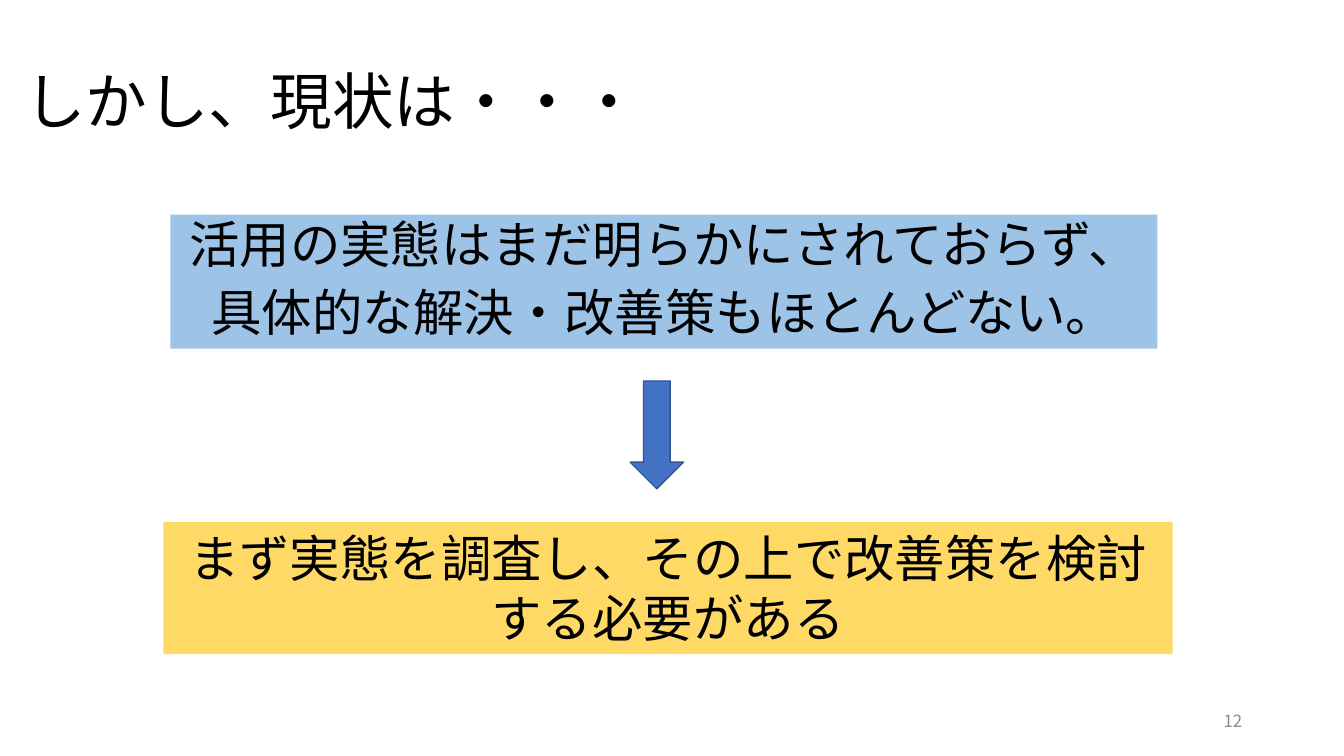
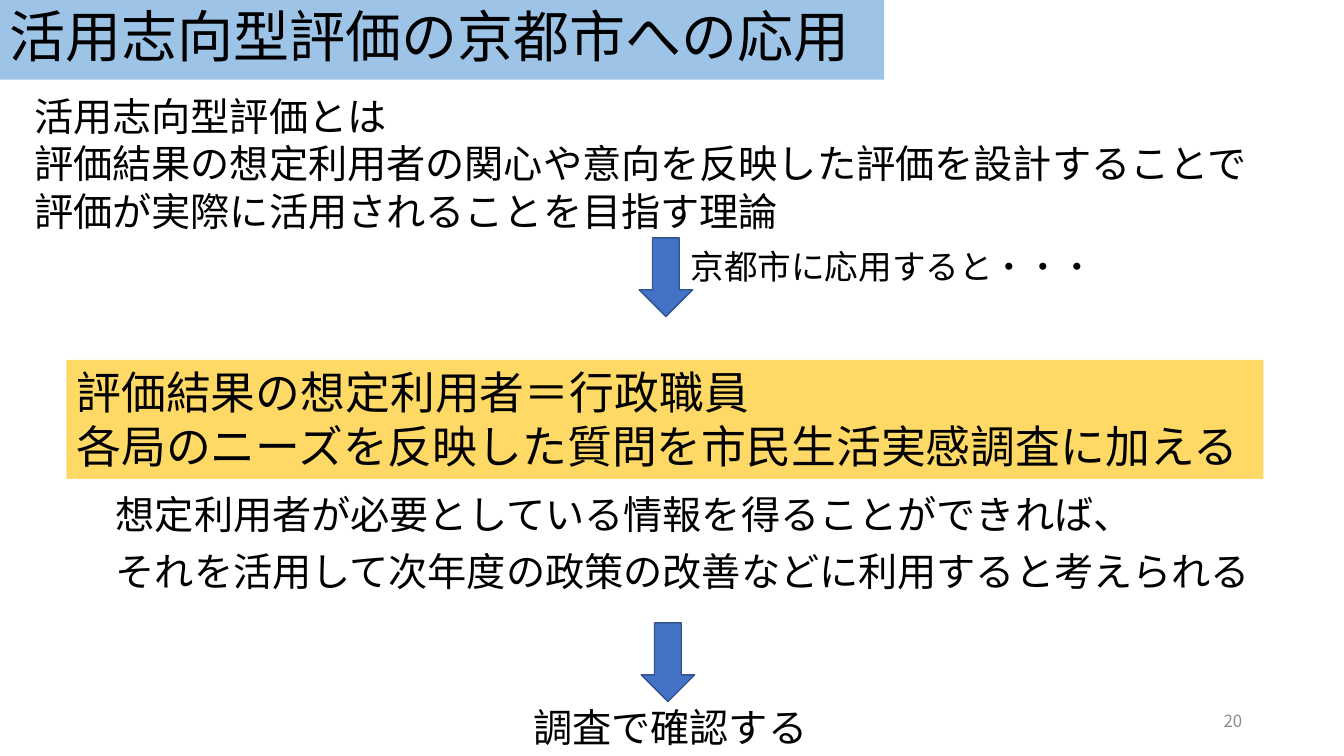
"""Build two slides on putting evaluation results to use."""
import pptx
import pptx.dml.color
import pptx.enum.shapes
import pptx.enum.text
import pptx.util
from lxml import etree

Inches = pptx.util.Inches
Pt = pptx.util.Pt
RGBColor = pptx.dml.color.RGBColor
SHAPE = pptx.enum.shapes.MSO_SHAPE
ALIGN = pptx.enum.text.PP_ALIGN
ANCHOR = pptx.enum.text.MSO_ANCHOR

FONT = "Noto Sans CJK JP"
BLACK = RGBColor(0x00, 0x00, 0x00)
GREY = RGBColor(0x8C, 0x8C, 0x8C)
SKY = RGBColor(0x9D, 0xC3, 0xE6)
GOLD = RGBColor(0xFF, 0xD9, 0x66)
BLUE = RGBColor(0x44, 0x72, 0xC4)
NAVY = RGBColor(0x32, 0x54, 0x91)
DRAWING = "{http://schemas.openxmlformats.org/drawingml/2006/main}"


def add_text(slide, place, lines, size, fill=None, color=BLACK, align=ALIGN.LEFT,
             anchor=ANCHOR.TOP, spacing=1.0, gap=0, indent=None):
    place = [Inches(n) for n in place]
    if fill is None:
        box = slide.shapes.add_textbox(*place)
    else:
        box = slide.shapes.add_shape(SHAPE.RECTANGLE, *place)
        box.shadow.inherit = False
        box.fill.solid()
        box.fill.fore_color.rgb = fill
        box.line.fill.background()
    frame = box.text_frame
    frame.word_wrap = True
    frame.vertical_anchor = anchor
    for i, line in enumerate(lines):
        para = frame.add_paragraph() if i else frame.paragraphs[0]
        para.alignment = align
        para.line_spacing = spacing
        if i:
            para.space_before = Pt(gap)
        if indent:
            props = para._p.get_or_add_pPr()
            props.set("marL", str(Inches(indent[0])))
            props.set("indent", str(Inches(indent[1])))
        run = para.add_run()
        run.text = line
        run.font.size = Pt(size)
        run.font.color.rgb = color
        run.font.name = FONT
        etree.SubElement(run._r.get_or_add_rPr(), DRAWING + "ea", typeface=FONT)


def add_arrow(slide, left, top, height):
    arrow = slide.shapes.add_shape(SHAPE.DOWN_ARROW, Inches(left), Inches(top),
                                   Inches(0.53), Inches(height))
    arrow.shadow.inherit = False
    arrow.fill.solid()
    arrow.fill.fore_color.rgb = BLUE
    arrow.line.color.rgb = NAVY
    arrow.line.width = Pt(1)


deck = pptx.Presentation()
deck.slide_width = Inches(13.33)
deck.slide_height = Inches(7.5)
blank = deck.slide_layouts[6]
state, usage = [deck.slides.add_slide(blank) for _ in range(2)]

for slide, number in ((state, "12"), (usage, "20")):
    add_text(slide, (9.42, 6.95, 3, 0.4), [number], 12, color=GREY,
             align=ALIGN.RIGHT, anchor=ANCHOR.MIDDLE)

add_text(state, (0.14, 0.66, 10.19, 0.89), ["しかし、現状は・・・"], 44, spacing=0.9)
add_text(state, (1.69, 2.13, 9.79, 1.33),
         ["活用の実態はまだ明らかにされておらず、", "具体的な解決・改善策もほとんどない。"],
         36, fill=SKY, align=ALIGN.CENTER, spacing=0.9, gap=10)
add_arrow(state, 6.25, 3.78, 1.07)
add_text(state, (1.62, 5.18, 10.01, 1.31),
         ["まず実態を調査し、その上で改善策を検討する必要がある"],
         36, fill=GOLD, align=ALIGN.CENTER)

add_text(usage, (0, 0, 8.77, 0.79), ["活用志向型評価の京都市への応用"], 40,
         fill=SKY, anchor=ANCHOR.MIDDLE, spacing=0.9)
add_text(usage, (0.24, 0.87, 12.77, 1.51),
         ["活用志向型評価とは",
          "評価結果の想定利用者の関心や意向を反映した評価を設計することで",
          "評価が実際に活用されることを目指す理論"], 28)
add_arrow(usage, 6.34, 2.36, 0.78)
add_text(usage, (6.75, 2.39, 4.24, 0.5), ["京都市に応用すると・・・"], 24)
add_text(usage, (0.66, 3.57, 11.87, 1.18),
         ["評価結果の想定利用者＝行政職員",
          "各局のニーズを反映した質問を市民生活実感調査に加える"], 32, fill=GOLD)
add_text(usage, (0.46, 4.87, 12.11, 1.17),
         ["想定利用者が必要としている情報を得ることができれば、",
          "それを活用して次年度の政策の改善などに利用すると考えられる"],
         28, spacing=0.9, gap=10, indent=(0.56, 0.03))
add_arrow(usage, 6.36, 6.18, 0.78)
add_text(usage, (5.19, 6.93, 2.95, 0.57), ["調査で確認する"], 28)

deck.save("out.pptx")
